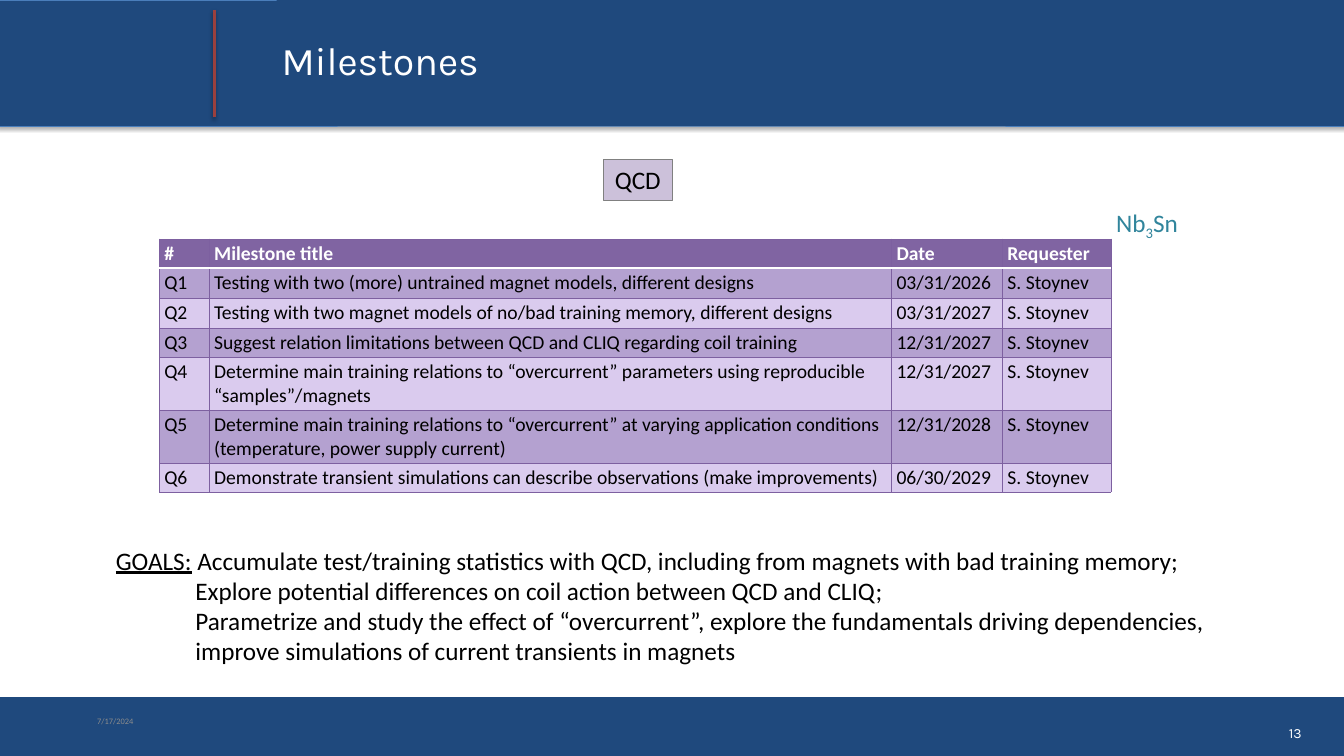
from dataclasses import dataclass

from lxml import etree
from pptx import Presentation
from pptx import util as u
from pptx.dml.color import RGBColor
from pptx.enum import shapes, text
from pptx.oxml import parse_xml
from pptx.oxml.ns import qn

DRAWING_NS = 'xmlns:a="http://schemas.openxmlformats.org/drawingml/2006/main"'


@dataclass(frozen=True)
class Theme:
    band: str = "1F497D"
    band_edge: str = "4A7EBB"
    rule: str = "9A403E"
    white: str = "FFFFFF"
    black: str = "000000"
    muted: str = "8C8C8C"
    tag: str = "CCC1DA"
    tag_edge: str = "808080"
    material: str = "31859C"
    table_head: str = "8064A2"
    table_rows: tuple = ("B4A1D0", "DACBEE")
    table_edge: str = "7D60A0"
    heading_font: str = "Karla"
    body_font: str = "Calibri"
    title_size: int = 56
    body_size: int = 36
    table_size: int = 28
    number_size: int = 20
    date_size: int = 12


THEME = Theme()

HEADERS = ("#", "Milestone title", "Date", "Requester")
REQUESTER = "S. Stoynev"
MILESTONES = (
    ("Testing with two (more) untrained magnet models, different designs", "03/31/2026"),
    ("Testing with two magnet models of no/bad training memory, different designs", "03/31/2027"),
    ("Suggest relation limitations between QCD and CLIQ regarding coil training", "12/31/2027"),
    ("Determine main training relations to “overcurrent” parameters using reproducible "
     "“samples”/magnets", "12/31/2027"),
    ("Determine main training relations to “overcurrent” at varying application conditions "
     "(temperature, power supply current)", "12/31/2028"),
    ("Demonstrate transient simulations can describe observations (make improvements)",
     "06/30/2029"),
)
COLUMN_SHARES = (5.24, 71.68, 11.65, 11.43)
ROW_HEIGHTS = (0.56, 0.61, 0.58, 0.58, 1.05, 1.05, 0.58)
GOALS = (
    "Accumulate test/training statistics with QCD, including from magnets with bad training memory;",
    "Explore potential differences on coil action between QCD and CLIQ;",
    "Parametrize and study the effect of “overcurrent”, explore the fundamentals driving dependencies,",
    "improve simulations of current transients in magnets",
)


def part(box, left, top, width, height):
    """Box inside another box, in percent of its size."""
    x, y, w, h = box
    return tuple(round(v) for v in (x + w * left / 100, y + h * top / 100,
                                    w * width / 100, h * height / 100))


def rgb(value):
    return RGBColor.from_string(value)


def add_span(para, content, *, size, color=THEME.black, font=THEME.body_font,
             bold=False, underline=False, baseline=None):
    span = para.add_run()
    span.text = content
    span.font.size, span.font.name = u.Pt(size), font
    span.font.bold, span.font.underline = bold, underline
    span.font.color.rgb = rgb(color)
    if baseline is not None:
        span.font._element.set("baseline", str(baseline * 1000))
    return span


def set_frame(shape, *, wrap=True, anchor=text.MSO_ANCHOR.TOP, inset=(0.1, 0.1),
              align=text.PP_ALIGN.LEFT):
    """Format a text frame and return its first paragraph."""
    frame = shape.text_frame
    frame.word_wrap, frame.vertical_anchor = wrap, anchor
    frame.auto_size = text.MSO_AUTO_SIZE.NONE
    frame.margin_left = frame.margin_right = u.Inches(inset[0])
    frame.margin_top = frame.margin_bottom = u.Inches(inset[1])
    frame.paragraphs[0].alignment = align
    return frame.paragraphs[0]


def add_shadow(shape, opacity):
    properties = shape._element.spPr
    for old in properties.findall(qn("a:effectLst")):
        properties.remove(old)
    properties.append(parse_xml(
        f'<a:effectLst {DRAWING_NS}><a:outerShdw blurRad="{u.Pt(6)}" dist="{u.Pt(3)}" '
        f'dir="5400000" rotWithShape="0"><a:srgbClr val="{THEME.black}">'
        f'<a:alpha val="{opacity * 1000}"/></a:srgbClr></a:outerShdw></a:effectLst>'))


def add_panel(page, box, fill, edge=None):
    panel = page.shapes.add_shape(shapes.MSO_SHAPE.RECTANGLE, *box)
    panel.shadow.inherit = False
    panel.fill.solid()
    panel.fill.fore_color.rgb = rgb(fill)
    if edge:
        panel.line.color.rgb = rgb(edge)
        panel.line.width = u.Pt(1)
    else:
        panel.line.fill.background()
    return panel


def add_footer(page, box):
    add_panel(page, box, THEME.band)
    date = page.shapes.add_textbox(*part(box, 6.99, 5.88, 22.44, 67.23))
    para = set_frame(date, anchor=text.MSO_ANCHOR.MIDDLE, inset=(0.1, 0.05))
    add_span(para, "7/17/2024", size=THEME.date_size, color=THEME.muted)
    number = page.shapes.add_textbox(*part(box, 95.14, 37.82, 1.98, 42.86))
    para = set_frame(number, wrap=False, anchor=text.MSO_ANCHOR.MIDDLE,
                     align=text.PP_ALIGN.RIGHT)
    add_span(para, "13", size=THEME.number_size, color=THEME.white, font=THEME.heading_font)


def add_header(page, box):
    add_shadow(add_panel(page, box, THEME.band, THEME.band_edge), 35)

    # Vertical rule
    x, y, _, height = part(box, 16.13, 8, 0, 85.2)
    rule = page.shapes.add_connector(shapes.MSO_CONNECTOR.STRAIGHT, x, y + height, x, y)
    rule.line.color.rgb = rgb(THEME.rule)
    rule.line.width = u.Pt(4)
    add_shadow(rule, 38)

    # Title placeholder, brought in front of the band
    title = page.shapes.title
    title.left, title.top, title.width, title.height = part(box, 20.75, -1.2, 79.17, 96.8)
    title.fill.solid()
    title.fill.fore_color.rgb = rgb(THEME.band)
    para = set_frame(title, anchor=text.MSO_ANCHOR.MIDDLE)
    add_span(para, "Milestones", size=THEME.title_size, color=THEME.white,
             font=THEME.heading_font)
    title.element.getparent().append(title.element)


def set_border(cell, side, color, width):
    line = etree.SubElement(cell._tc.get_or_add_tcPr(), qn(f"a:ln{side}"), w=str(u.Pt(width)))
    fill = etree.SubElement(line, qn("a:solidFill"))
    etree.SubElement(fill, qn("a:srgbClr"), val=color)


def format_cell(cell, content, row):
    for side in "LRTB":
        divider = (row, side) in ((0, "B"), (1, "T"))
        set_border(cell, side, THEME.white if divider else THEME.table_edge,
                   2 if divider else 0.75)
    head = row == 0
    cell.fill.solid()
    cell.fill.fore_color.rgb = rgb(THEME.table_head if head else THEME.table_rows[(row - 1) % 2])
    add_span(cell.text_frame.paragraphs[0], content, size=THEME.table_size, bold=head,
             color=THEME.white if head else THEME.black)


def add_milestones(page, box):
    rows = [HEADERS] + [(f"Q{i}", goal, date, REQUESTER)
                        for i, (goal, date) in enumerate(MILESTONES, 1)]
    table = page.shapes.add_table(len(rows), len(HEADERS), *box).table
    for column, share in zip(table.columns, COLUMN_SHARES):
        column.width = round(box[2] * share / 100)
    for r, (row, height) in enumerate(zip(rows, ROW_HEIGHTS)):
        table.rows[r].height = u.Inches(height)
        for c, content in enumerate(row):
            format_cell(table.cell(r, c), content, r)

    # Topic tag above the table
    tag = add_panel(page, part(box, 46.64, -31.92, 7.25, 16.36), THEME.tag, THEME.tag_edge)
    add_span(set_frame(tag, align=text.PP_ALIGN.CENTER), "QCD", size=THEME.body_size)

    # Material at the upper right corner
    material = page.shapes.add_textbox(*part(box, 100, -14.75, 7.73, 16.36))
    para = set_frame(material, wrap=False)
    for content, baseline in (("Nb", None), ("3", -25), ("Sn", None)):
        add_span(para, content, size=THEME.body_size, color=THEME.material, baseline=baseline)


def add_goals(page, box):
    goals = page.shapes.add_textbox(*box)
    para = set_frame(goals)
    add_span(para, "GOALS:", size=THEME.body_size, underline=True)
    add_span(para, " " + GOALS[0], size=THEME.body_size)
    for goal in GOALS[1:]:
        para = goals.text_frame.add_paragraph()
        para._p.get_or_add_pPr().set("marL", str(u.Inches(1.58)))
        add_span(para, goal, size=THEME.body_size)


def main():
    deck = Presentation()
    deck.slide_width, deck.slide_height = u.Inches(26.67), u.Inches(15)
    page = deck.slides.add_slide(deck.slide_layouts[5])
    whole = (0, 0, deck.slide_width, deck.slide_height)
    add_footer(page, part(whole, -0.15, 92.2, 100.26, 7.93))
    add_header(page, part(whole, -0.26, 0, 100.45, 16.67))
    add_milestones(page, part(whole, 11.85, 31.6, 70.83, 33))
    add_goals(page, part(whole, 8.25, 71.4, 83.5, 17.53))
    deck.save("out.pptx")


if __name__ == "__main__":
    main()
